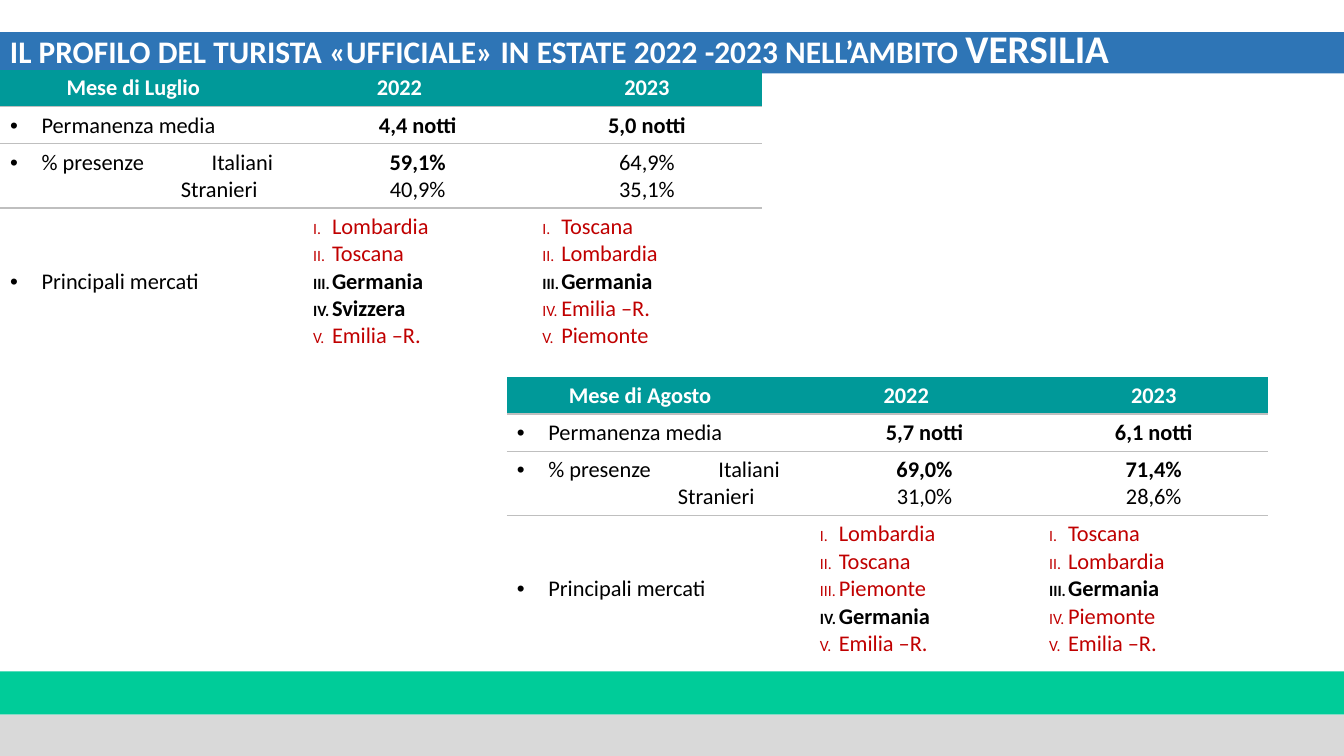
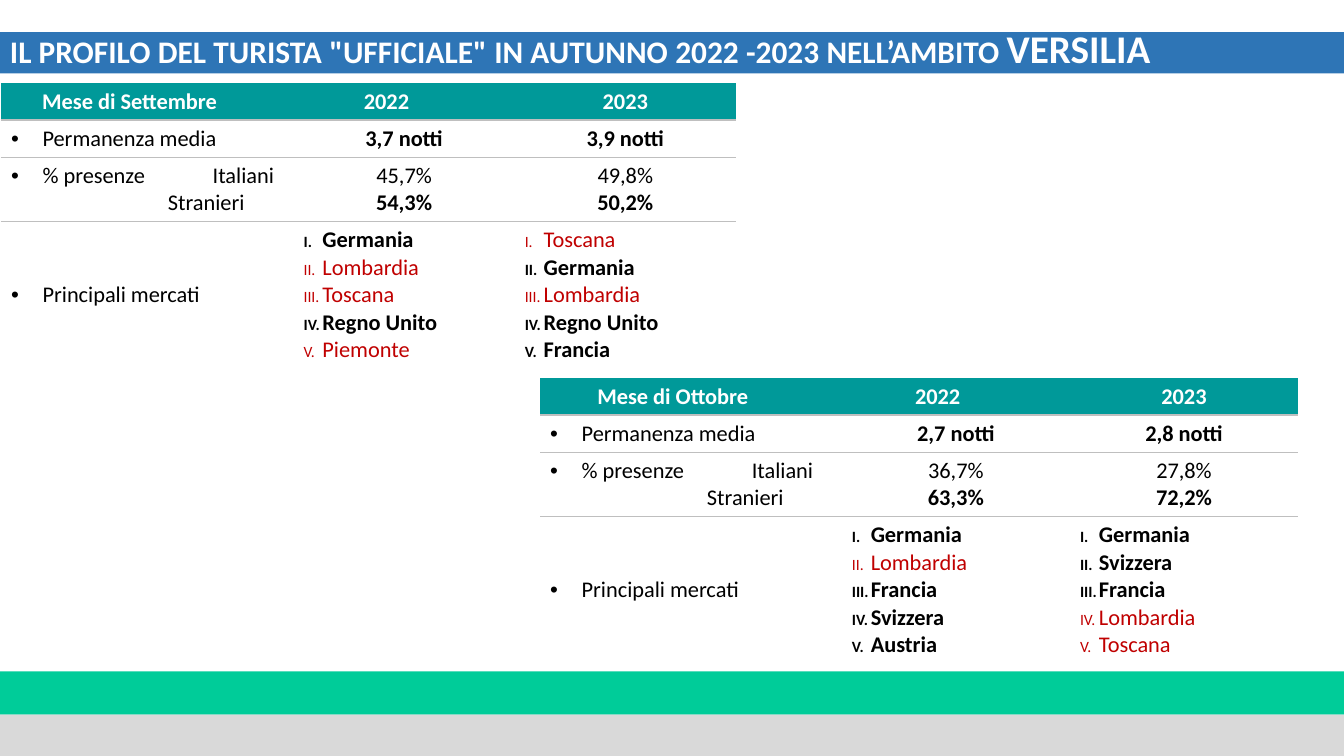
from lxml.etree import SubElement
from pptx import Presentation
from pptx.dml.color import RGBColor
from pptx.enum.shapes import MSO_SHAPE as SHAPE
from pptx.enum.text import MSO_ANCHOR as ANCHOR, PP_ALIGN as ALIGN
from pptx.oxml.ns import qn
from pptx.util import Pt

WIDTH, HEIGHT = 960, 540
FONT = "Calibri"
WHITE, BLACK, RED = "FFFFFF", "000000", "C00000"
TEAL, RULE = "009999", "BFBFBF"
BANDS = [(479.5, 31, "00CC99"), (510.5, 29.5, "D9D9D9"), (23, 29.5, "2E75B6")]
COLUMNS = (0.35, 0.048, 0.301, 0.301)
ROWS = (26.5, 26.5, 46, 105)
REGIONS = {"Lombardia", "Toscana", "Emilia –R.", "Piemonte"}

SLIDES = [
    ("il profilo del turista «ufficiale» in estate 2022 -2023 nell’ambito VERSILIA", [
        dict(month="Luglio", x=0, y=49.7, w=544, indent=122,
             stays=("4,4", "5,0"),
             shares=(("59,1%", "40,9%"), ("64,9%", "35,1%")), strong=(0, None),
             markets=(("Lombardia", "Toscana", "Germania", "Svizzera", "Emilia –R."),
                      ("Toscana", "Lombardia", "Germania", "Emilia –R.", "Piemonte"))),
        dict(month="Agosto", x=362, y=269.3, w=544, indent=115,
             stays=("5,7", "6,1"),
             shares=(("69,0%", "31,0%"), ("71,4%", "28,6%")), strong=(0, 0),
             markets=(("Lombardia", "Toscana", "Piemonte", "Germania", "Emilia –R."),
                      ("Toscana", "Lombardia", "Germania", "Piemonte", "Emilia –R."))),
    ]),
    ("il profilo del turista \"ufficiale\" in autunno 2022 -2023 nell’ambito VERSILIA", [
        dict(month="Settembre", x=0.7, y=59.3, w=525, indent=112,
             stays=("3,7", "3,9"),
             shares=(("45,7%", "54,3%"), ("49,8%", "50,2%")), strong=(1, 1),
             markets=(("Germania", "Lombardia", "Toscana", "Regno Unito", "Piemonte"),
                      ("Toscana", "Germania", "Lombardia", "Regno Unito", "Francia"))),
        dict(month="Ottobre", x=385.8, y=270, w=541.5, indent=112,
             stays=("2,7", "2,8"),
             shares=(("36,7%", "63,3%"), ("27,8%", "72,2%")), strong=(1, 1),
             markets=(("Germania", "Lombardia", "Francia", "Svizzera", "Austria"),
                      ("Germania", "Svizzera", "Francia", "Lombardia", "Toscana"))),
    ]),
]


def rgb(value):
    """Turn a hex string into a colour."""
    return RGBColor.from_string(value)


def add_text(tf, text, size=16, color=BLACK, bold=False, align=ALIGN.LEFT, caps=False):
    """Write a formatted paragraph, reusing the first one while it is empty."""
    p = tf.paragraphs[0]
    if p.runs:
        p = tf.add_paragraph()
    p.alignment = align
    r = p.add_run()
    r.text = text
    r.font.name, r.font.size, r.font.bold = FONT, Pt(size), bold
    r.font.color.rgb = rgb(color)
    if caps:
        r._r.get_or_add_rPr().set("cap", "small")
    return p


def set_indent(p, left, first=0):
    """Set the left margin and first-line indent of a paragraph."""
    pPr = p._p.get_or_add_pPr()
    pPr.set("marL", str(Pt(left)))
    pPr.set("indent", str(Pt(first)))
    return pPr


def add_bullet(p, hang, color=BLACK, roman=False, tab=None):
    """Give a paragraph a hanging dot or a small roman numeral."""
    pPr = set_indent(p, hang, -hang)
    SubElement(SubElement(pPr, qn("a:buClr")), qn("a:srgbClr"), val=color)
    if roman:
        SubElement(pPr, qn("a:buSzPct"), val="70000")
        SubElement(pPr, qn("a:buFont"), typeface="+mj-lt")
        SubElement(pPr, qn("a:buAutoNum"), type="romanUcPeriod")
    else:
        SubElement(pPr, qn("a:buFont"), typeface="Arial")
        SubElement(pPr, qn("a:buChar"), char="•")
    if tab:
        tabs = SubElement(pPr, qn("a:tabLst"))
        SubElement(tabs, qn("a:tab"), pos=str(Pt(tab)), algn="l")


def add_rule(cell, side):
    """Draw a thin grey border on one side of a cell."""
    ln = SubElement(cell._tc.get_or_add_tcPr(), qn(f"a:ln{side}"), w=str(Pt(0.96)))
    SubElement(SubElement(ln, qn("a:solidFill")), qn("a:srgbClr"), val=RULE)


def add_band(s, y, h, color):
    """Add a full-width coloured band."""
    sp = s.shapes.add_shape(SHAPE.RECTANGLE, 0, Pt(y), Pt(WIDTH), Pt(h))
    sp.shadow.inherit = False
    sp.fill.solid()
    sp.fill.fore_color.rgb = rgb(color)
    sp.line.fill.background()


def add_title(s, title):
    """Add the slide title over its band."""
    tf = s.shapes.add_textbox(0, Pt(18), Pt(WIDTH), Pt(31.7)).text_frame
    tf.word_wrap = True
    tf.vertical_anchor = ANCHOR.MIDDLE
    add_text(tf, title, size=28, color=WHITE, bold=True, caps=True)


def add_grid(s, x, y, w):
    """Add an empty month table with its merges, rules and fills."""
    frame = s.shapes.add_table(len(ROWS), len(COLUMNS), Pt(x), Pt(y), Pt(w), Pt(sum(ROWS)))
    table = frame.table
    table.first_row = table.horz_banding = False
    style = table._tbl.tblPr.find(qn("a:tableStyleId"))
    style.text = "{2D5ABB26-0587-4C30-8999-92F81FD0307C}"
    for column, share in zip(table.columns, COLUMNS):
        column.width = Pt(w * share)
    last = len(ROWS) - 1
    for i, height in enumerate(ROWS):
        table.rows[i].height = Pt(height)
        for cell in table.rows[i].cells:
            cell.vertical_anchor = ANCHOR.MIDDLE
            if i > 0:
                add_rule(cell, "T")
            if i < last:
                add_rule(cell, "B")
            if i == 0:
                cell.fill.solid()
                cell.fill.fore_color.rgb = rgb(TEAL)
            else:
                cell.fill.background()
        first = 1 if i == 0 else 0
        table.cell(i, first).merge(table.cell(i, first + 1))
    return table


def add_month(s, month, x, y, w, indent, stays, shares, strong, markets):
    """Add the table of one month's tourist profile."""
    table = add_grid(s, x, y, w)
    for col, text in ((0, f"Mese di {month}"), (1, "2022"), (3, "2023")):
        add_text(table.cell(0, col).text_frame, text, color=WHITE, bold=True, align=ALIGN.CENTER)
    labels = ("Permanenza media", "% presenze\tItaliani", "Principali mercati")
    for row, label in enumerate(labels, 1):
        p = add_text(table.cell(row, 0).text_frame, label)
        add_bullet(p, 22.5, tab=144 if "\t" in label else None)
    set_indent(add_text(table.cell(2, 0).text_frame, "Stranieri"), indent)
    for year, col in enumerate((2, 3)):
        stay, share, market = (table.cell(row, col).text_frame for row in (1, 2, 3))
        add_text(stay, f"{stays[year]} notti", bold=True, align=ALIGN.CENTER)
        for i, value in enumerate(shares[year]):
            add_text(share, value, bold=i == strong[year], align=ALIGN.CENTER)
        for name in markets[year]:
            color = RED if name in REGIONS else BLACK
            p = add_text(market, name, color=color, bold=name not in REGIONS)
            add_bullet(p, 13.5, color, roman=True)


def main():
    """Build and save the presentation."""
    prs = Presentation()
    prs.slide_width, prs.slide_height = Pt(WIDTH), Pt(HEIGHT)
    for title, months in SLIDES:
        s = prs.slides.add_slide(prs.slide_layouts[6])
        for band in BANDS:
            add_band(s, *band)
        add_title(s, title)
        for month in months:
            add_month(s, **month)
    prs.save("out.pptx")


if __name__ == "__main__":
    main()
